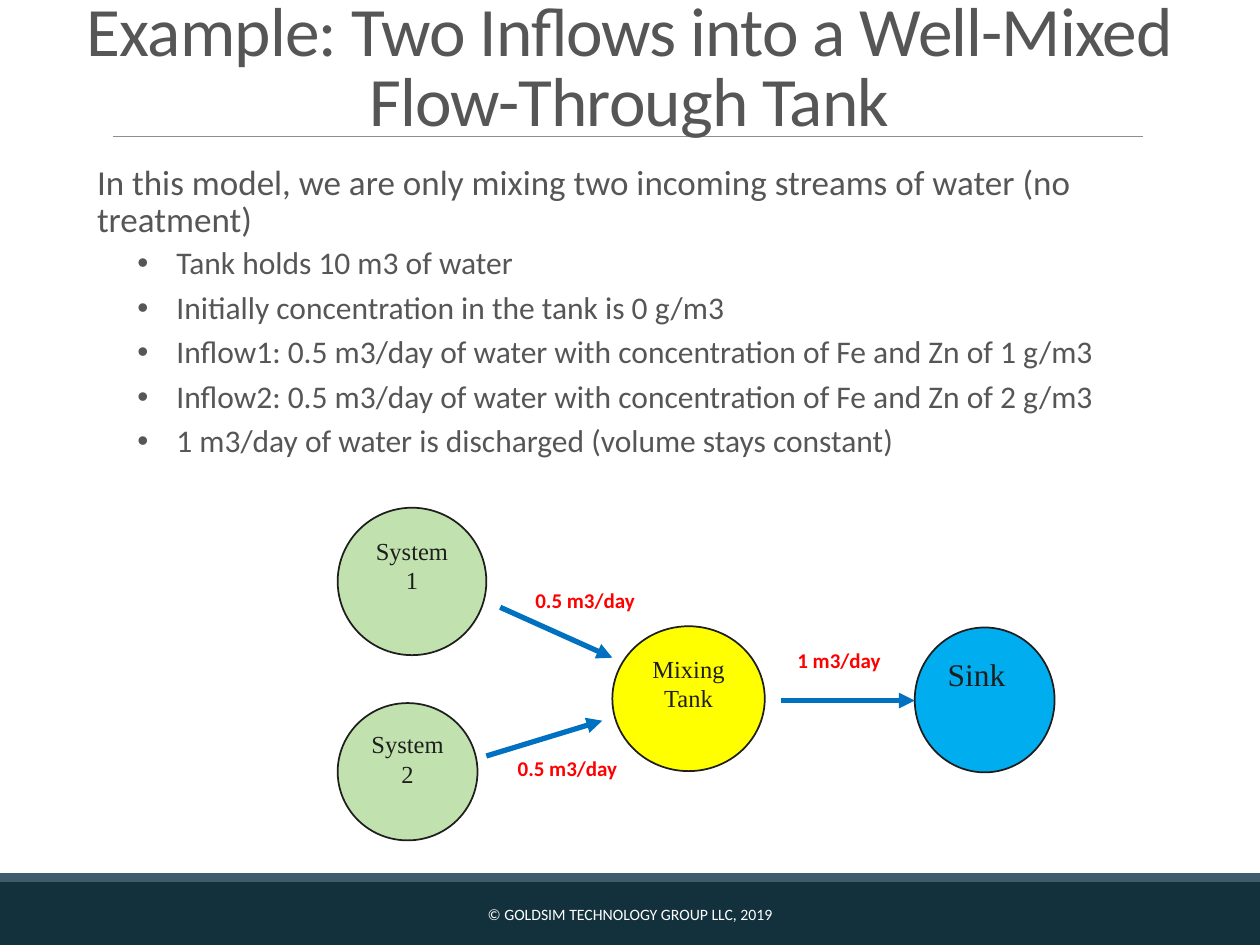
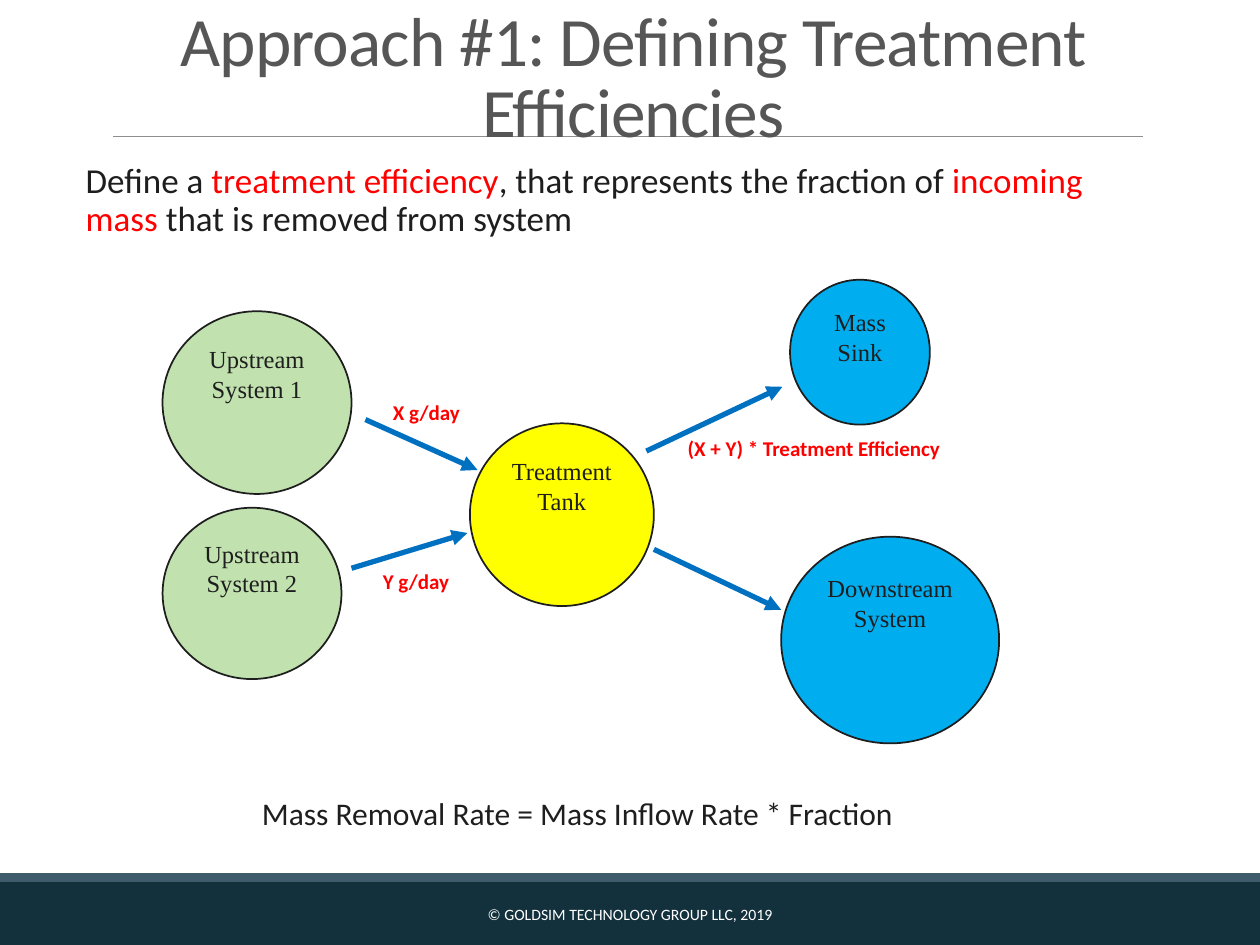
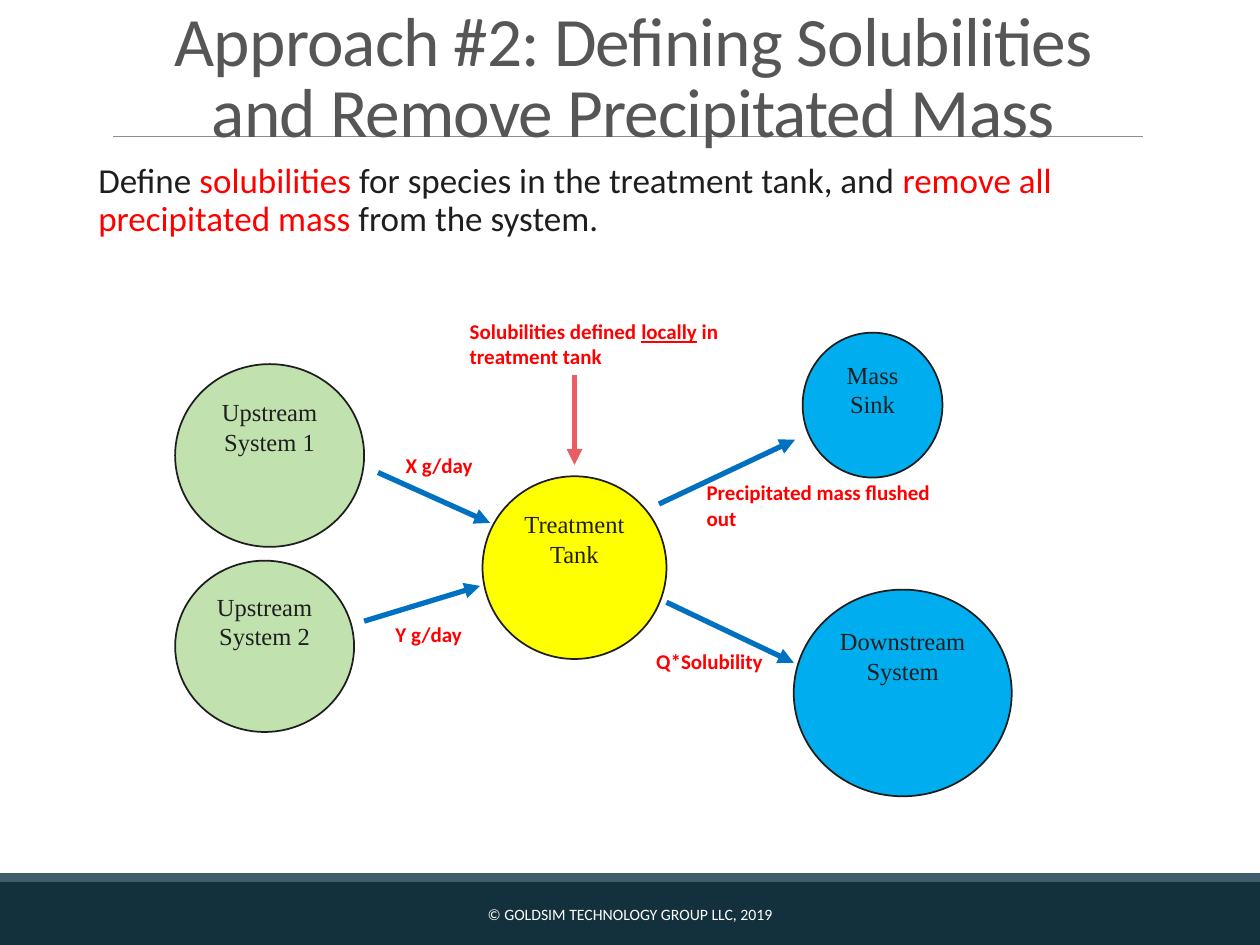
from lxml.etree import SubElement
from pptx import Presentation
from pptx.dml.color import RGBColor
from pptx.enum.shapes import MSO_CONNECTOR, MSO_SHAPE
from pptx.enum.text import MSO_ANCHOR, MSO_AUTO_SIZE, PP_ALIGN
from pptx.oxml.ns import qn
from pptx.util import Inches, Pt

COLORS = {
    "band": "13313C", "stripe": "3F5C6C", "rule": "8E8E8E", "title": "565656",
    "ink": "1E1E1E", "accent": "FF0000", "white": "FFFFFF", "flow": "0070C0",
    "pointer": "EB5D62", "source": "C1E2AE", "tank": "FFFF00", "sink": "00ADEF",
}
RGB = {name: RGBColor.from_string(value) for name, value in COLORS.items()}

# Text styles: size, color, and where they differ from the defaults, the rest
TITLE = {"size": 39.6, "color": "title", "align": PP_ALIGN.CENTER,
         "anchor": MSO_ANCHOR.BOTTOM, "line_spacing": 0.85, "tracking": -50}
LEAD = {"size": 20, "color": "ink", "inset": 0, "line_spacing": 0.9, "space_after": Pt(2)}
BULLET = {"size": 18, "line_spacing": 0.9, "space_before": Pt(2), "space_after": Pt(4),
          "bullet": True}
FOOTER = {"size": 9, "color": "white", "align": PP_ALIGN.CENTER, "anchor": MSO_ANCHOR.MIDDLE}
LABEL = {"size": 12, "color": "accent", "bold": True, "anchor": MSO_ANCHOR.MIDDLE}
NODE = {"size": 14, "color": "ink", "font": "Times New Roman", "align": PP_ALIGN.CENTER}
FORMULA = {"size": 18, "color": "ink"}

# Places are in columns and rows: the slide is 10 columns wide and 7.5 rows high
TREATMENT_NODES = [
    ("Upstream System 2", "source", (1.29, 4.03, 1.42, 1.36)),
    ("Treatment Tank", "tank", (3.73, 3.36, 1.46, 1.45)),
    ("Downstream System", "sink", (6.2, 4.26, 1.73, 1.64)),
    ("Upstream System 1", "source", (1.29, 2.47, 1.5, 1.45)),
    ("Mass Sink", "sink", (6.27, 2.22, 1.11, 1.15)),
]
TREATMENT_FLOWS = [
    ("flow", (2.79, 4.51), (3.71, 4.23)),
    ("flow", (5.19, 4.36), (6.2, 4.84)),
    ("flow", (2.9, 3.33), (3.79, 3.73)),
    ("flow", (5.13, 3.58), (6.21, 3.07)),
]
INFLOW_LABELS = [("X g/day", (3.02, 3.02, 1.11)), ("Y g/day", (2.94, 4.36, 1.11))]

SLIDES = [
    {
        "title": ("Example: Two Inflows into a Well-Mixed Flow-Through Tank", (0.29, 0.25, 9.41, 0.92)),
        "lead_at": (0.77, 1.26, 7.95, 2.54),
        "lead": [("In this model, we are only mixing two incoming streams of water (no treatment)",
                  {"color": "title"})],
        "bullets": [
            "Tank holds 10 m3 of water",
            "Initially concentration in the tank is 0 g/m3",
            "Inflow1: 0.5 m3/day of water with concentration of Fe and Zn of 1 g/m3",
            "Inflow2: 0.5 m3/day of water with concentration of Fe and Zn of 2 g/m3",
            "1 m3/day of water is discharged (volume stays constant)",
        ],
        "nodes": [
            ("System 2", "source", (2.68, 5.58, 1.11, 1.09)),
            ("Mixing Tank", "tank", (4.86, 4.97, 1.21, 1.15)),
            ("Sink", "sink", (7.26, 4.98, 1.11, 1.15)),
            ("System 1", "source", (2.68, 4.03, 1.18, 1.17)),
        ],
        "flows": [
            ("flow", (3.86, 6), (4.78, 5.72)),
            ("flow", (6.2, 5.56), (7.26, 5.56)),
            ("flow", (3.97, 4.82), (4.86, 5.22)),
        ],
        "labels": [
            ("1 m3/day", (6.23, 4.99, 1.11)),
            ("0.5 m3/day", (4.15, 4.51, 1.11)),
            ("0.5 m3/day", (4.01, 5.85, 1.11)),
        ],
    },
    {
        "title": ("Approach #1: Defining Treatment Efficiencies", (0.9, 0.33, 8.25, 0.92)),
        "lead_at": (0.68, 1.25, 8.25, 0.75),
        "lead": [("Define a ", {}), ("treatment efficiency", {"color": "accent"}),
                 (", that represents the fraction of ", {}),
                 ("incoming mass ", {"color": "accent"}), ("that is removed from system", {})],
        "nodes": TREATMENT_NODES,
        "flows": TREATMENT_FLOWS,
        "labels": INFLOW_LABELS + [("(X + Y) * Treatment Efficiency", (5.36, 3.31, 2.23))],
        "formula": "Mass Removal Rate = Mass Inflow Rate * Fraction",
    },
    {
        "title": ("Approach #2: Defining Solubilities and Remove Precipitated Mass", (0.9, 0.33, 8.25, 0.92)),
        "lead_at": (0.78, 1.25, 8.15, 0.75),
        "lead": [("Define ", {}), ("solubilities", {"color": "accent"}),
                 (" for species in the treatment tank, and ", {}),
                 ("remove all precipitated mass", {"color": "accent"}), (" from the system.", {})],
        "shift": (0.1, 0.42),
        "nodes": TREATMENT_NODES,
        "flows": TREATMENT_FLOWS + [("pointer", (4.46, 2.56), (4.46, 3.27))],
        "labels": INFLOW_LABELS + [
            ("Precipitated mass flushed out", (5.41, 3.34, 2.23)),
            ([("Solubilities defined ", {}), ("locally", {"underline": True}),
              (" in treatment tank", {})], (3.53, 2.06, 2.23)),
            ("Q*Solubility", (5.01, 4.58, 1.11)),
        ],
    },
]

deck = Presentation()
deck.slide_width, deck.slide_height = Inches(10), Inches(7.5)
UNIT = deck.slide_width // 10


def write(shape, paragraphs):
    """Fill a shape with (spans, style) paragraphs; the first style sets the frame."""
    frame = shape.text_frame
    frame.word_wrap = True
    frame.auto_size = MSO_AUTO_SIZE.NONE
    frame.vertical_anchor = paragraphs[0][1].get("anchor", MSO_ANCHOR.TOP)
    frame.margin_left = frame.margin_right = Inches(paragraphs[0][1].get("inset", 0.1))
    for index, (spans, style) in enumerate(paragraphs):
        para = frame.add_paragraph() if index else frame.paragraphs[0]
        if style.get("bullet"):
            properties = para._p.get_or_add_pPr()
            properties.set("marL", str(Inches(0.63)))
            properties.set("indent", str(Inches(-0.31)))
            SubElement(properties, qn("a:buFont"), typeface="Arial")
            SubElement(properties, qn("a:buChar"), char="•")
        para.alignment = style.get("align", PP_ALIGN.LEFT)
        for name in ("line_spacing", "space_before", "space_after"):
            if name in style:
                setattr(para, name, style[name])
        for text, changes in [(spans, {})] if isinstance(spans, str) else spans:
            look = {**style, **changes}
            span = para.add_run()
            span.text = text
            span.font.name = look.get("font", "Calibri")
            span.font.size = Pt(look["size"])
            span.font.color.rgb = RGB[look.get("color", "title")]
            for name in ("bold", "underline"):
                if name in look:
                    setattr(span.font, name, look[name])
            if "tracking" in look:
                span._r.get_or_add_rPr().set("spc", str(look["tracking"]))


def add_line(page, start, end, color, width, arrow=False):
    ends = [round(value * UNIT) for value in (*start, *end)]
    line = page.shapes.add_connector(MSO_CONNECTOR.STRAIGHT, *ends)
    line.line.color.rgb = RGB[color]
    line.line.width = Pt(width)
    if arrow:
        SubElement(line.line._get_or_add_ln(), qn("a:tailEnd"), type="triangle")
    SubElement(line._element.spPr, qn("a:effectLst"))


for content in SLIDES:
    page = deck.slides.add_slide(deck.slide_layouts[5])

    for color, top, height in (("band", 7, 0.5), ("stripe", 6.93, 0.07)):
        band = page.shapes.add_shape(MSO_SHAPE.RECTANGLE, 0, round(top * UNIT),
                                     deck.slide_width, round(height * UNIT))
        band.shadow.inherit = False
        band.fill.solid()
        band.fill.fore_color.rgb = RGB[color]
        band.line.fill.background()
    add_line(page, (0.9, 1.08), (9.07, 1.08), "rule", 0.5)

    title = page.shapes.title
    title_text, place = content["title"]
    for name, value in zip(("left", "top", "width", "height"), place):
        setattr(title, name, round(value * UNIT))
    write(title, [(title_text, TITLE)])
    title.element.getparent().append(title.element)

    dx, dy = content.get("shift", (0, 0))
    for text, color, (left, top, width, height) in content["nodes"]:
        place = [round(value * UNIT) for value in (left + dx, top + dy, width, height)]
        node = page.shapes.add_shape(MSO_SHAPE.OVAL, *place)
        node.shadow.inherit = False
        node.fill.solid()
        node.fill.fore_color.rgb = RGB[color]
        node.line.color.rgb = RGB["ink"]
        node.line.width = Pt(1)
        style = {**NODE, "size": 18, "align": PP_ALIGN.LEFT} if text == "Sink" else NODE
        write(node, [(text, style)])

    for color, (x1, y1), (x2, y2) in content["flows"]:
        add_line(page, (x1 + dx, y1 + dy), (x2 + dx, y2 + dy), color, 3, arrow=True)

    bullets = [(text, BULLET) for text in content.get("bullets", [])]
    texts = [
        (content["lead_at"], [(content["lead"], LEAD)] + bullets),
        ((3.02, 7.06, 3.96, 0.4), [("© GOLDSIM TECHNOLOGY GROUP LLC, 2019", FOOTER)]),
    ]
    for text, (left, top, width) in content["labels"]:
        texts.append(((left + dx, top + dy, width, 0.5), [(text, LABEL)]))
    if "formula" in content:
        texts.append(((1.98, 6.25, 5.48, 0.71), [(content["formula"], FORMULA)]))
    for place, paragraphs in texts:
        box = page.shapes.add_textbox(*[round(value * UNIT) for value in place])
        write(box, paragraphs)

deck.save("out.pptx")
